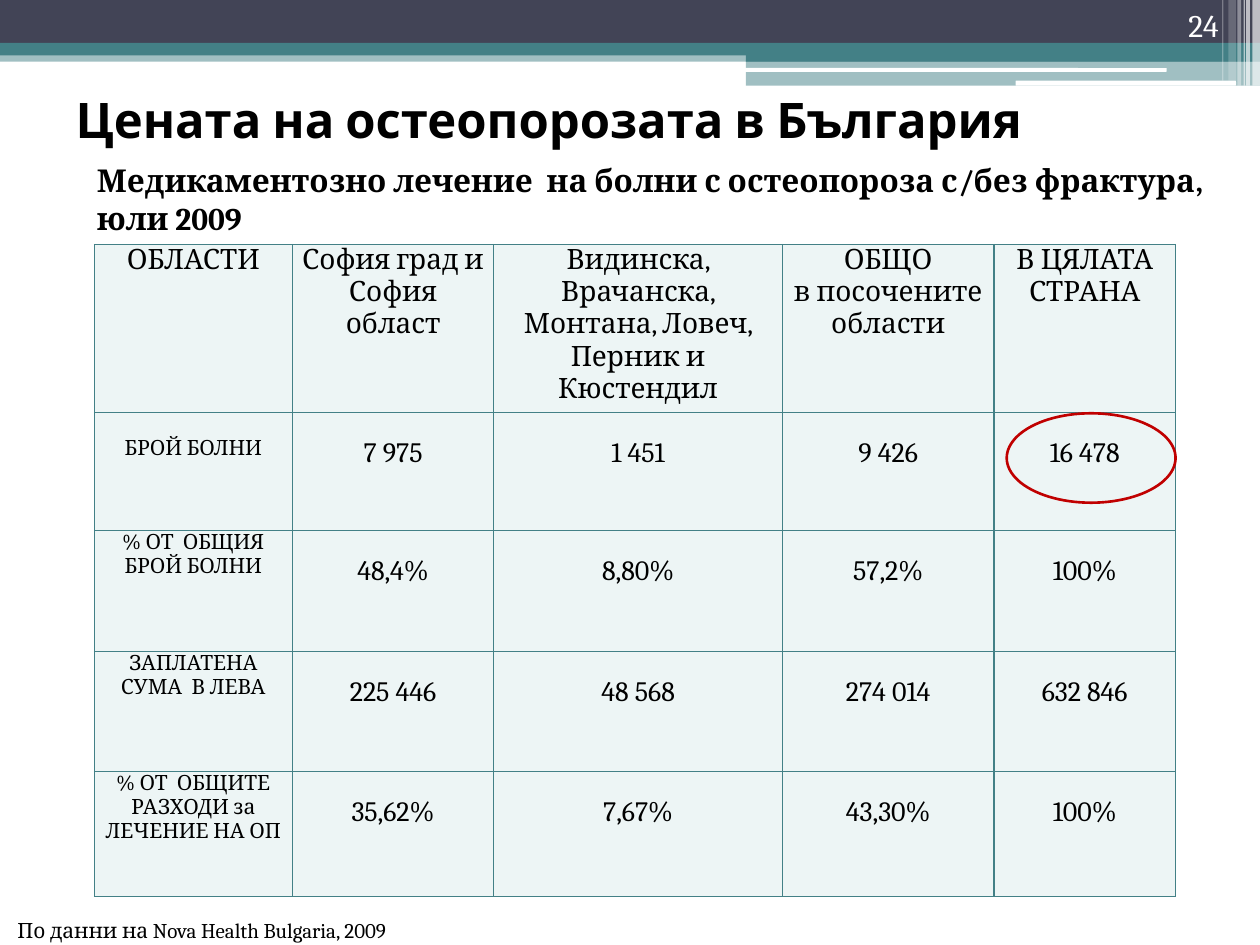
from dataclasses import dataclass

from lxml import etree
from pptx import Presentation
from pptx import util as u
from pptx.dml.color import RGBColor
from pptx.enum import shapes, text
from pptx.oxml.ns import qn


@dataclass(frozen=True)
class Theme:
    dark = "424456"
    teal = "438086"
    pale = "EDF5F5"
    white = "FFFFFF"
    black = "000000"
    red = "C00000"
    heading_font = "Cabin"
    body_font = "Cambria"
    title_size = 28
    subtitle_size = 18
    table_size = 16
    small_size = 12


theme = Theme()
deck = Presentation()
deck.slide_width, deck.slide_height = u.Inches(10), u.Inches(7.5)
column, row = deck.slide_width / 100, deck.slide_height / 75


def place(left, top, width, height):
    return [u.Emu(round(n)) for n in (left * column, top * row, width * column, height * row)]


def add_span(para, words, size, color=theme.black, font=theme.body_font, bold=False):
    span = para.add_run()
    span.text = words
    span.font.size = u.Pt(size)
    span.font.name = font
    span.font.bold = bold
    span.font.color.rgb = RGBColor.from_string(color)


page = deck.slides.add_slide(deck.slide_layouts[5])

rect, rounded = shapes.MSO_SHAPE.RECTANGLE, shapes.MSO_SHAPE.ROUNDED_RECTANGLE
bands = [
    (rect, 0, 4, 100, 0.9, theme.teal, 50),
    (rect, 0, 0, 100, 3.4, theme.dark, 100),
    (rect, 0, 3.4, 100, 1, theme.teal, 100),
    (rect, 59.2, 3.9, 40.8, 1, theme.teal, 100),
    (rect, 59.2, 4.8, 40.8, 2, theme.teal, 50),
    (rounded, 59.1, 5.4, 33.5, 0.3, theme.white, 100),
    (rounded, 80.6, 6.4, 17.5, 0.4, theme.white, 100),
]
stripes = [
    (99.4, 0.6, 6.8, 65), (98.9, 0.3, 6.8, 65), (98.7, 0.1, 6.8, 60),
    (98.2, 0.3, 6.8, 40), (97.5, 0.6, 6.4, 20), (97, 0.1, 6.4, 30),
]
bands += [(rect, left, 0, width, height, theme.white, opacity)
          for left, width, height, opacity in stripes]
for kind, left, top, width, height, color, opacity in bands:
    band = page.shapes.add_shape(kind, *place(left, top, width, height))
    band.shadow.inherit = False
    band.line.fill.background()
    band.fill.solid()
    band.fill.fore_color.rgb = RGBColor.from_string(color)
    if opacity < 100:
        shade = band.fill._xPr.find(".//" + qn("a:srgbClr"))
        etree.SubElement(shade, qn("a:alpha"), val=str(opacity * 1000))

title = page.shapes.title
title.left, title.top, title.width, title.height = place(5, 3.6, 90, 11.7)
title.text_frame.vertical_anchor = text.MSO_ANCHOR.MIDDLE
para = title.text_frame.paragraphs[0]
para.alignment = text.PP_ALIGN.LEFT
add_span(para, "Цената на остеопорозата в България", theme.title_size,
         font=theme.heading_font, bold=True)

left_align, right_align = text.PP_ALIGN.LEFT, text.PP_ALIGN.RIGHT
top_anchor, bottom_anchor = text.MSO_ANCHOR.TOP, text.MSO_ANCHOR.BOTTOM
labels = [
    ((89.4, 0, 8.3, 4), "24", theme.subtitle_size, theme.white, False,
     right_align, bottom_anchor),
    ((0.4, 72.3, 54.3, 3), "По данни на Nova Health Bulgaria, 2009", theme.small_size,
     theme.black, False, left_align, top_anchor),
    ((6.7, 12.3, 91.3, 4),
     "Медикаментозно лечение  на болни с остеопороза с/без фрактура, юли 2009",
     theme.subtitle_size, theme.black, True, left_align, top_anchor),
]
for area, words, size, color, bold, align, anchor in labels:
    box = page.shapes.add_textbox(*place(*area))
    box.text_frame.word_wrap = True
    box.text_frame.vertical_anchor = anchor
    para = box.text_frame.paragraphs[0]
    para.alignment = align
    add_span(para, words, size, color, bold=bold)

table_rows = [
    ["ОБЛАСТИ", "София град и\nСофия област",
     "Видинска, Врачанска, Монтана, Ловеч, Перник и Кюстендил",
     "ОБЩО\nв посочените области", "В ЦЯЛАТА СТРАНА"],
    ["БРОЙ БОЛНИ", "7 975", "1 451", "9 426", "16 478"],
    ["% ОТ  ОБЩИЯ БРОЙ БОЛНИ", "48,4%", "8,80%", "57,2%", "100%"],
    ["ЗАПЛАТЕНА СУМА  В ЛЕВА", "225 446", "48 568", "274 014", "632 846"],
    ["% ОТ  ОБЩИТЕ РАЗХОДИ за ЛЕЧЕНИЕ НА ОП", "35,62%", "7,67%", "43,30%", "100%"],
]
widths = [15.7, 16, 22.9, 16.8, 14.4]
heights = [12.8, 9.4, 9.6, 9.5, 9.9]
table = page.shapes.add_table(
    len(heights), len(widths), *place(7.5, 19.4, sum(widths), sum(heights))).table
for index, width in enumerate(widths):
    table.columns[index].width = u.Emu(round(width * column))
for index, height in enumerate(heights):
    table.rows[index].height = u.Emu(round(height * row))

for r, entries in enumerate(table_rows):
    for c, entry in enumerate(entries):
        cell = table.cell(r, c)
        lowered = r == 1 or (r > 1 and c > 0)
        cell.margin_left = cell.margin_right = u.Inches(0.07)
        cell.margin_top = u.Pt(14 if lowered else 0)
        cell.margin_bottom = 0
        size = theme.small_size if r > 0 and c == 0 else theme.table_size
        for number, words in enumerate(entry.split("\n")):
            frame = cell.text_frame
            para = frame.add_paragraph() if number else frame.paragraphs[0]
            para.alignment = text.PP_ALIGN.CENTER
            add_span(para, words, size)
        properties = cell._tc.get_or_add_tcPr()
        for side in ("lnL", "lnR", "lnT", "lnB"):
            border = etree.SubElement(properties, qn("a:" + side), w=str(u.Pt(0.75)))
            paint = etree.SubElement(border, qn("a:solidFill"))
            etree.SubElement(paint, qn("a:srgbClr"), val=theme.teal)
        cell.fill.solid()
        cell.fill.fore_color.rgb = RGBColor.from_string(theme.pale)

highlight = page.shapes.add_shape(shapes.MSO_SHAPE.OVAL, *place(79.9, 32.8, 13.4, 7.1))
highlight.shadow.inherit = False
highlight.fill.background()
highlight.line.color.rgb = RGBColor.from_string(theme.red)
highlight.line.width = u.Pt(1.5)

deck.save("out.pptx")
